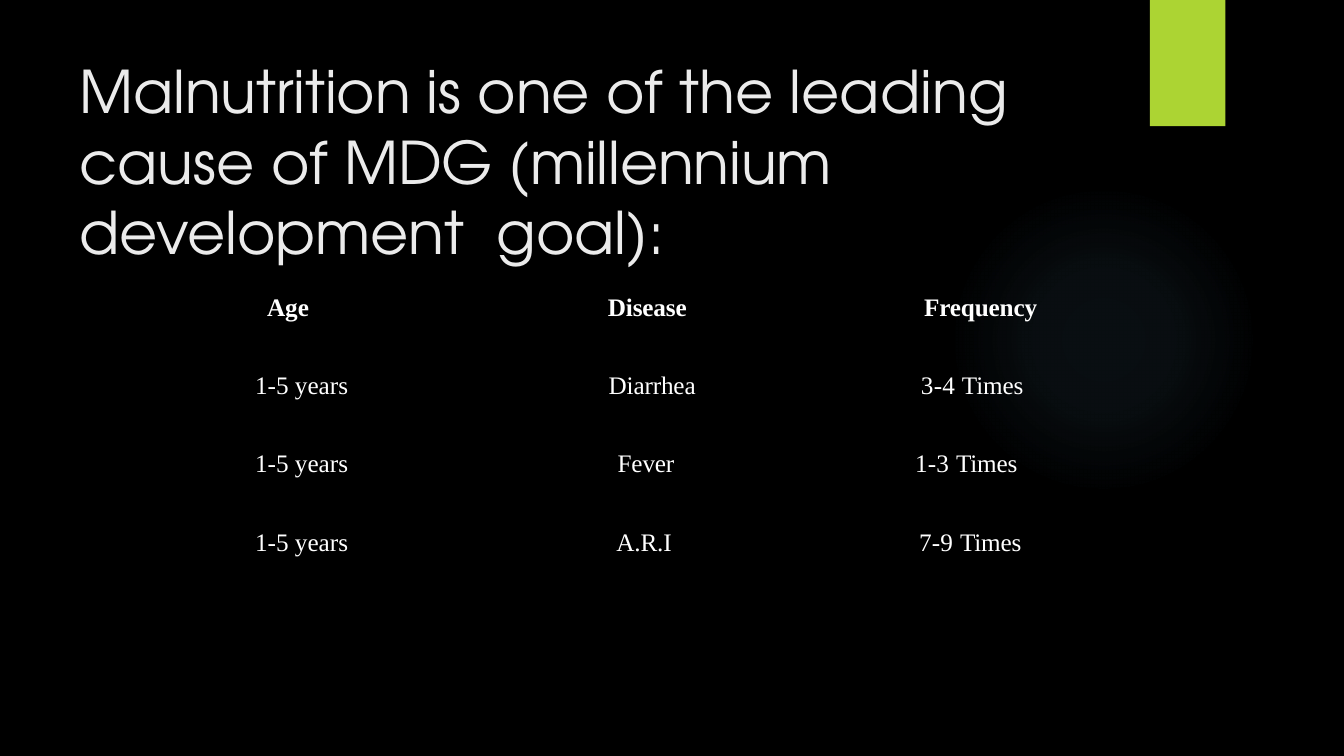
from dataclasses import dataclass

import pptx
import pptx.dml.color
import pptx.enum.shapes
import pptx.enum.text
import pptx.oxml
import pptx.oxml.ns
import pptx.util
from pptx.util import Cm

LEFT = pptx.enum.text.PP_ALIGN.LEFT
CENTER = pptx.enum.text.PP_ALIGN.CENTER
NO_STYLE = "{2D5ABB26-0587-4C30-8999-92F81FD0307C}"


@dataclass(frozen=True)
class Span:
    text: str
    spacing: float = 0


@dataclass(frozen=True)
class Entry:
    spans: tuple[Span, ...]
    indent: float
    align: int = LEFT


@dataclass(frozen=True)
class Record:
    height: float
    entries: tuple[Entry, ...]
    top: float = 0.65
    bold: bool = False
    line_height: float | None = None


@dataclass(frozen=True)
class Decoration:
    preset: int
    left: float
    top: float
    width: float
    height: float


def age(text: str = "1-5 years", indent: float = 0.08) -> Entry:
    return Entry((Span(text),), indent)


def disease(text: str, indent: float, align: int = LEFT) -> Entry:
    return Entry((Span(text, -0.1),), indent, align)


def frequency(count: str, indent: float) -> Entry:
    return Entry((Span(count + " ", 0.2), Span("Times", -0.1)), indent)


GLOW = Decoration(pptx.enum.shapes.MSO_SHAPE.OVAL, 23.9, 4.65, 7.82, 7.82)
RIBBON = Decoration(pptx.enum.shapes.MSO_SHAPE.RECTANGLE, 28.98, 0, 1.9, 3.18)
GLOW_STOPS = ((0, 7), (36, 6), (69, 0))

HEADING = (
    Span("Malnutrition is ", -0.1),
    Span("one of the leading cause of "),
    Span("MDG (millennium development", -0.1),
    Span(" ", 11.6),
    Span("goal):"),
)
COLUMN_WIDTHS = (5.74, 8.28, 5.94)
RECORDS = (
    Record(1.3, (age("Age", 0.38), disease("Disease", 3.23),
                 Entry((Span("Frequency", -0.1),), 2.92)),
           top=0, bold=True, line_height=19.6),
    Record(1.96, (age(), disease("Diarrhea", 3.25), frequency("3-4", 2.84))),
    Record(1.96, (age(), disease("Fever", 0.1, CENTER), frequency("1-3", 2.69))),
    Record(1.78, (age(), disease("A.R.I", 0, CENTER), frequency("7-9", 2.79)),
           line_height=20.9),
)


def rgb(value: str) -> pptx.dml.color.RGBColor:
    return pptx.dml.color.RGBColor.from_string(value)


def write(paragraph, spans: tuple[Span, ...], font: str, size: float,
          color: str, bold: bool = False) -> None:
    for span in spans:
        run = paragraph.add_run()
        run.text = span.text
        run.font.name = font
        run.font.size = pptx.util.Pt(size)
        run.font.bold = bold
        run.font.color.rgb = rgb(color)
        run.font._element.set("spc", str(round(span.spacing * 100)))


def decorate(slide, part: Decoration, color: str):
    shape = slide.shapes.add_shape(
        part.preset, Cm(part.left), Cm(part.top), Cm(part.width), Cm(part.height))
    shape.shadow.inherit = False
    shape.line.fill.background()
    shape.fill.solid()
    shape.fill.fore_color.rgb = rgb(color)
    return shape


def fade(shape, color: str) -> None:
    stops = "".join(
        f'<a:gs pos="{position * 1000}"><a:srgbClr val="{color}">'
        f'<a:alpha val="{alpha * 1000}"/></a:srgbClr></a:gs>'
        for position, alpha in GLOW_STOPS)
    gradient = pptx.oxml.parse_xml(
        f'<a:gradFill {pptx.oxml.ns.nsdecls("a")}><a:gsLst>{stops}</a:gsLst>'
        '<a:path path="circle"><a:fillToRect l="50000" t="50000" r="50000" b="50000"/>'
        '</a:path></a:gradFill>')
    properties = shape._element.spPr
    solid = properties.find(pptx.oxml.ns.qn("a:solidFill"))
    properties.replace(solid, gradient)


def add_heading(slide) -> None:
    heading = slide.shapes.add_textbox(Cm(2.01), Cm(1.32), Cm(25.58), Cm(5.4))
    frame = heading.text_frame
    frame.word_wrap = True
    frame.margin_left = frame.margin_right = frame.margin_bottom = 0
    frame.margin_top = Cm(0.06)
    write(frame.paragraphs[0], HEADING, "TeX Gyre Adventor", 42, "EBEBEB")


def fill_cell(cell, entry: Entry, record: Record) -> None:
    cell.fill.background()
    cell.margin_left = Cm(entry.indent)
    cell.margin_top = Cm(record.top)
    cell.margin_right = cell.margin_bottom = 0
    paragraph = cell.text_frame.paragraphs[0]
    paragraph.alignment = entry.align
    if record.line_height:
        paragraph.line_spacing = pptx.util.Pt(record.line_height)
    write(paragraph, entry.spans, "Times New Roman", 18, "FFFFFF", record.bold)


def add_disease_table(slide) -> None:
    frame = slide.shapes.add_table(
        len(RECORDS), len(COLUMN_WIDTHS), Cm(6.35), Cm(7.42),
        Cm(sum(COLUMN_WIDTHS)), Cm(sum(record.height for record in RECORDS)))
    table = frame.table
    table.first_row = table.horz_banding = False
    table._tbl.tblPr.find(pptx.oxml.ns.qn("a:tableStyleId")).text = NO_STYLE
    for column, width in zip(table.columns, COLUMN_WIDTHS):
        column.width = Cm(width)
    for row, record in zip(table.rows, RECORDS):
        row.height = Cm(record.height)
        for cell, entry in zip(row.cells, record.entries):
            fill_cell(cell, entry, record)


def main() -> None:
    presentation = pptx.Presentation()
    presentation.slide_width = Cm(33.87)
    presentation.slide_height = Cm(19.05)
    slide = presentation.slides.add_slide(presentation.slide_layouts[6])
    slide.background.fill.solid()
    slide.background.fill.fore_color.rgb = rgb("000000")
    fade(decorate(slide, GLOW, "7AC4F0"), "7AC4F0")
    decorate(slide, RIBBON, "ACD433")
    add_heading(slide)
    add_disease_table(slide)
    presentation.save("out.pptx")


if __name__ == "__main__":
    main()
